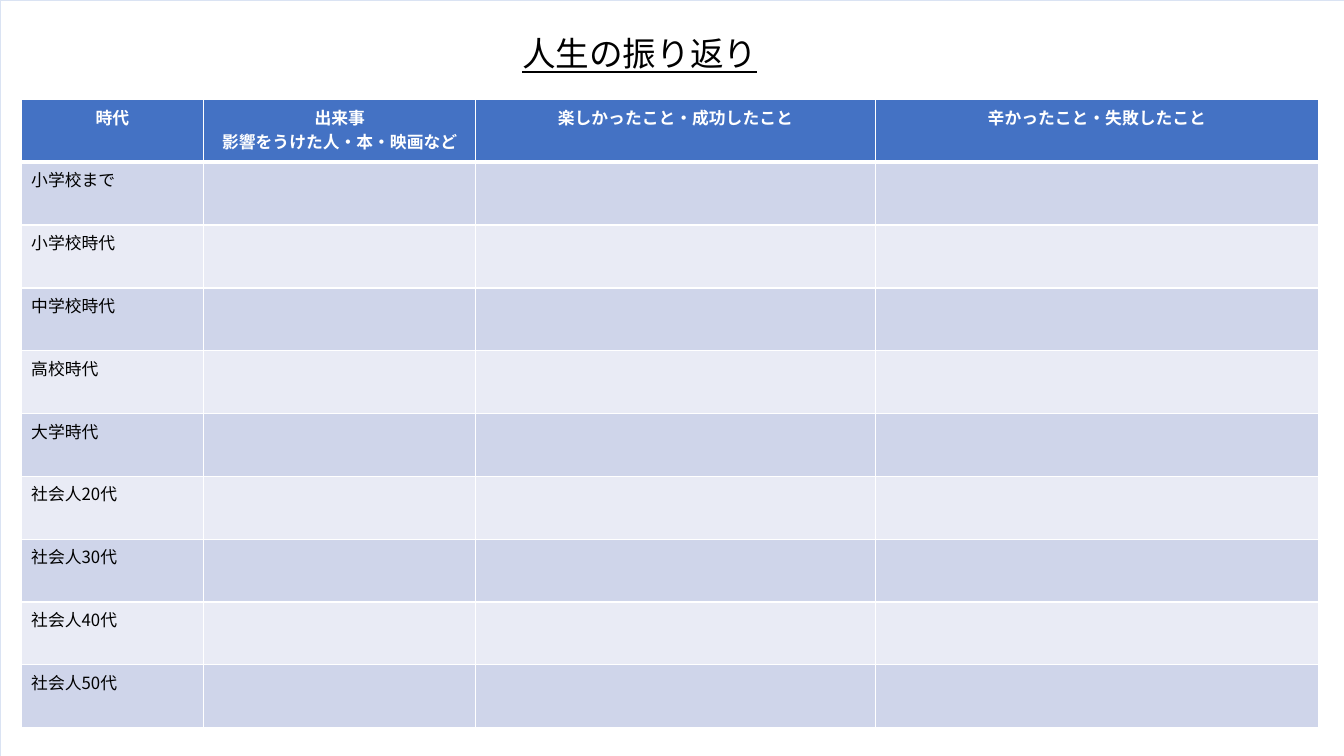
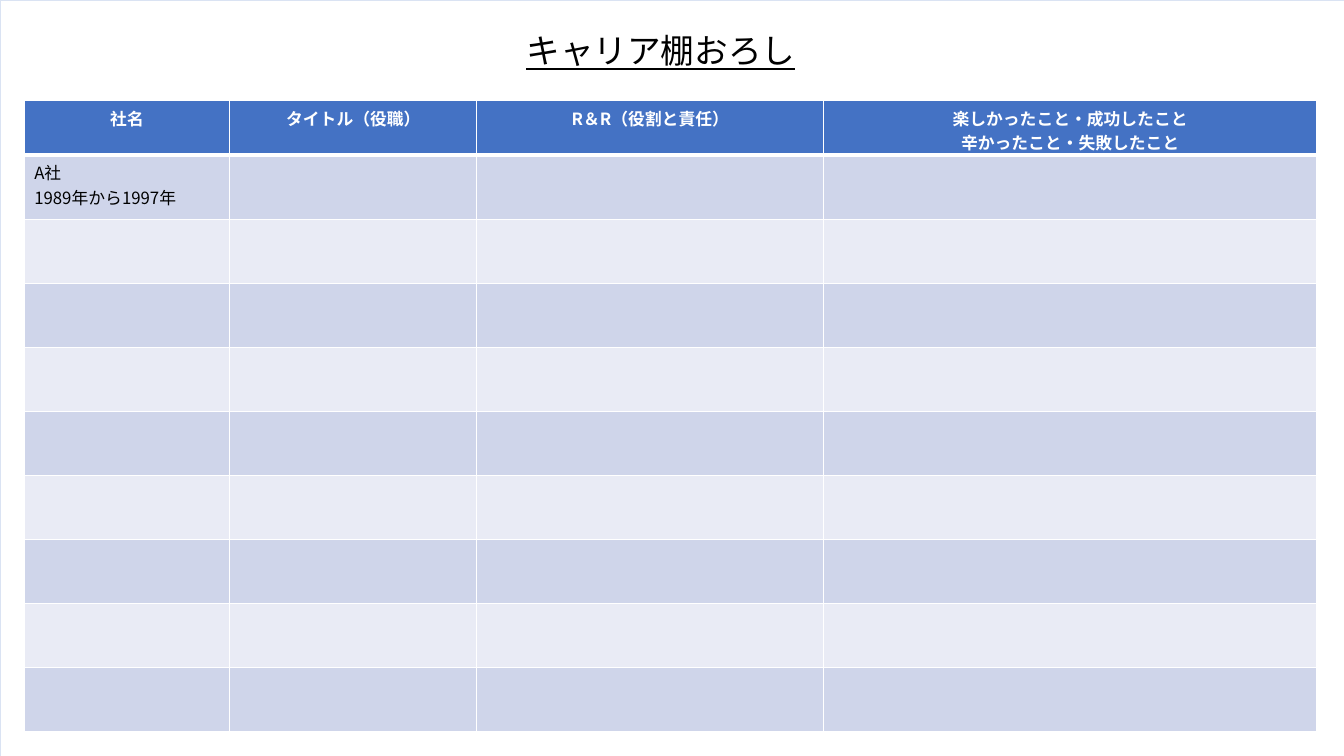
from lxml.etree import SubElement
from pptx import Presentation
from pptx.dml.color import RGBColor
from pptx.enum.shapes import MSO_SHAPE as Preset
from pptx.enum.text import MSO_ANCHOR as Anchor, MSO_AUTO_SIZE as AutoSize, PP_ALIGN as Align
from pptx.oxml.ns import qn
from pptx.util import Inches, Pt

SLIDE_WIDTH, SLIDE_HEIGHT = 13.33, 7.5
FONT = "Noto Sans CJK JP"
BLACK, WHITE, FRAME = "000000", "FFFFFF", "DAE3F3"
HEADER_FILL, BAND_FILLS = "4472C4", ("CFD5EA", "E9EBF5")
BODY_ROWS = 9
THIN, THICK = 1, 3

TITLE_FORMAT = {"size": Pt(24), "bold": False, "underline": True}
HEADER_FORMAT = {"size": Pt(12), "bold": True}
BODY_FORMAT = {"size": Pt(12), "bold": False}

WORKSHEETS = [
    {
        "title": "人生の振り返り",
        "title_at": (1.51, 0.28),
        "table_at": (0.21, 0.99),
        "columns": (1.81, 2.7, 3.96, 4.4),
        "height": 6.23,
        "header_height": 0.62,
        "headers": ("時代", "出来事\n影響をうけた人・本・映画など",
                    "楽しかったこと・成功したこと", "辛かったこと・失敗したこと"),
        "labels": ("小学校まで", "小学校時代", "中学校時代", "高校時代", "大学時代",
                   "社会人20代", "社会人30代", "社会人40代", "社会人50代"),
    },
    {
        "title": "キャリア棚おろし",
        "title_at": (1.72, 0.25),
        "table_at": (0.24, 1),
        "columns": (2.04, 2.45, 3.44, 4.89),
        "height": 6.26,
        "header_height": 0.54,
        "headers": ("社名", "タイトル（役職）", "R＆R（役割と責任）",
                    "楽しかったこと・成功したこと\n辛かったこと・失敗したこと"),
        "labels": ("A社\n1989年から1997年",),
    },
]


def color(hex_value):
    return RGBColor.from_string(hex_value)


def write_text(text_frame, text, text_format, hex_value, alignment):
    text_frame.text = text
    for paragraph in text_frame.paragraphs:
        paragraph.alignment = alignment
        for run in paragraph.runs:
            for name, value in text_format.items():
                setattr(run.font, name, value)
            run.font.color.rgb = color(hex_value)
            run.font.name = FONT
            latin = run.font._element.find(qn("a:latin"))
            east_asian = latin.makeelement(qn("a:ea"), {"typeface": FONT})
            latin.addnext(east_asian)


def set_borders(cell, top, bottom):
    properties = cell._tc.get_or_add_tcPr()
    for side, width in (("L", THIN), ("R", THIN), ("T", top), ("B", bottom)):
        line = SubElement(properties, qn(f"a:ln{side}"), w=str(Pt(width)))
        fill = SubElement(line, qn("a:solidFill"))
        SubElement(fill, qn("a:srgbClr"), val=WHITE)


def add_title(slide, text, position):
    title = slide.shapes.title
    title.left, title.top = map(Inches, position)
    title.width, title.height = Inches(9.67), Inches(0.5)
    text_frame = title.text_frame
    text_frame.word_wrap = True
    text_frame.auto_size = AutoSize.SHAPE_TO_FIT_TEXT
    text_frame.vertical_anchor = Anchor.TOP
    write_text(text_frame, text, TITLE_FORMAT, BLACK, Align.CENTER)


def add_worksheet_table(slide, sheet):
    columns, height, header_height = sheet["columns"], sheet["height"], sheet["header_height"]
    box = map(Inches, (*sheet["table_at"], sum(columns), height))
    table = slide.shapes.add_table(BODY_ROWS + 1, len(columns), *box).table
    for column, width in zip(table.columns, columns):
        column.width = Inches(width)
    body_height = (height - header_height) / BODY_ROWS
    for row_index, row in enumerate(table.rows):
        is_header = row_index == 0
        row.height = Inches(header_height if is_header else body_height)
        for cell in row.cells:
            set_borders(cell, THICK if row_index == 1 else THIN, THICK if is_header else THIN)
            cell.fill.solid()
            band = BAND_FILLS[(row_index - 1) % 2]
            cell.fill.fore_color.rgb = color(HEADER_FILL if is_header else band)
    for cell, text in zip(table.rows[0].cells, sheet["headers"]):
        cell.margin_bottom = 0
        write_text(cell.text_frame, text, HEADER_FORMAT, WHITE, Align.CENTER)
    for row_index, text in enumerate(sheet["labels"], start=1):
        write_text(table.cell(row_index, 0).text_frame, text, BODY_FORMAT, BLACK, Align.LEFT)


def add_frame(slide):
    frame = slide.shapes.add_shape(Preset.RECTANGLE, 0, 0, Inches(SLIDE_WIDTH), Inches(SLIDE_HEIGHT))
    frame.shadow.inherit = False
    frame.fill.background()
    frame.line.color.rgb = color(FRAME)
    frame.line.width = Pt(0.5)


def main():
    """Build the life review and career inventory worksheets."""
    presentation = Presentation()
    presentation.slide_width = Inches(SLIDE_WIDTH)
    presentation.slide_height = Inches(SLIDE_HEIGHT)
    title_only = presentation.slide_layouts.get_by_name("Title Only")
    for sheet in WORKSHEETS:
        slide = presentation.slides.add_slide(title_only)
        add_title(slide, sheet["title"], sheet["title_at"])
        add_worksheet_table(slide, sheet)
        add_frame(slide)
    presentation.save("out.pptx")


if __name__ == "__main__":
    main()
